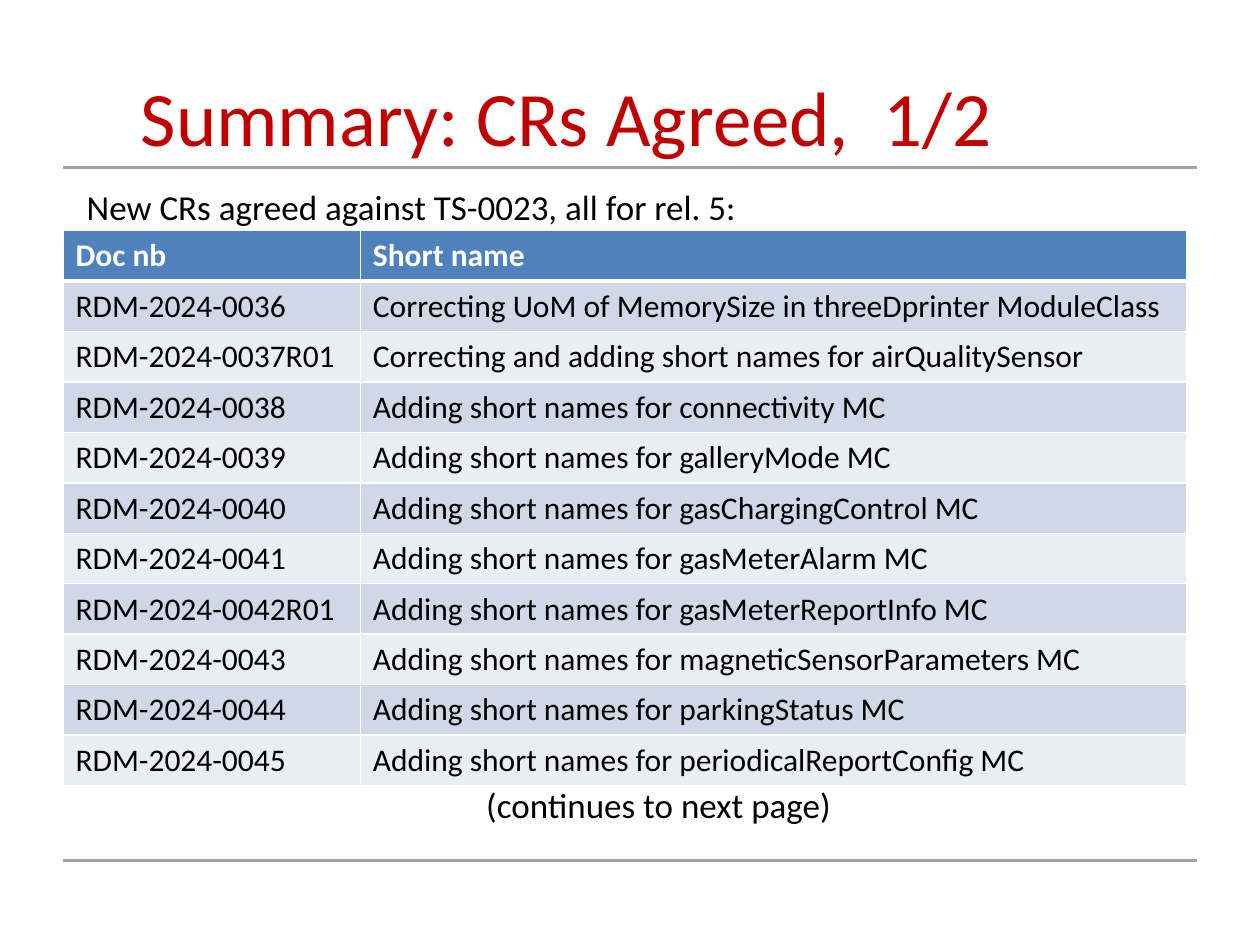
from lxml.etree import SubElement
from pptx import Presentation
from pptx.dml.color import RGBColor
from pptx.enum.shapes import MSO_CONNECTOR
from pptx.enum.text import MSO_ANCHOR, PP_ALIGN
from pptx.oxml.ns import qn
from pptx.util import Inches, Pt

COLORS = {
    "rule": "A0A0A3",
    "title": "C00000",
    "text": "000000",
    "white": "FFFFFF",
    "header": "4F81BD",
    "odd_row": "D0D8E8",
    "even_row": "E9EDF4",
}
FONT = "Calibri"
ROW_HEIGHT = 0.4
COLUMN_WIDTHS = (2.36, 6.56)
HEADINGS = ("Doc nb", "Short name")
CHANGE_REQUESTS = (
    ("RDM-2024-0036", "Correcting UoM of MemorySize in threeDprinter ModuleClass"),
    ("RDM-2024-0037R01", "Correcting and adding short names for airQualitySensor"),
    ("RDM-2024-0038", "Adding short names for connectivity MC"),
    ("RDM-2024-0039", "Adding short names for galleryMode MC"),
    ("RDM-2024-0040", "Adding short names for gasChargingControl MC"),
    ("RDM-2024-0041", "Adding short names for gasMeterAlarm MC"),
    ("RDM-2024-0042R01", "Adding short names for gasMeterReportInfo MC"),
    ("RDM-2024-0043", "Adding short names for magneticSensorParameters MC"),
    ("RDM-2024-0044", "Adding short names for parkingStatus MC"),
    ("RDM-2024-0045", "Adding short names for periodicalReportConfig MC"),
)


def color(name):
    return RGBColor.from_string(COLORS[name])


def format_runs(paragraph, size, color_name, bold=False):
    for run in paragraph.runs:
        run.font.name = FONT
        run.font.size = Pt(size)
        run.font.bold = bold
        run.font.color.rgb = color(color_name)


def add_rule(slide, top):
    rule = slide.shapes.add_connector(
        MSO_CONNECTOR.STRAIGHT, Inches(0.5), Inches(top), Inches(9.5), Inches(top)
    )
    rule.line.color.rgb = color("rule")
    rule.line.width = Pt(1.75)
    SubElement(rule._element.spPr, qn("a:effectLst"))


def add_text(slide, text, box, size, color_name, align=PP_ALIGN.LEFT, indent=0):
    shape = slide.shapes.add_textbox(*(Inches(length) for length in box))
    text_frame = shape.text_frame
    text_frame.word_wrap = True
    text_frame.vertical_anchor = MSO_ANCHOR.TOP
    text_frame.text = text
    paragraph = text_frame.paragraphs[0]
    paragraph.alignment = align
    if indent:
        paragraph._p.get_or_add_pPr().set("marL", str(Inches(indent)))
    format_runs(paragraph, size, color_name)


def set_borders(cell, widths):
    properties = cell._tc.get_or_add_tcPr()
    for position, (side, width) in enumerate(widths.items()):
        border = properties.makeelement(qn(f"a:{side}"), {"w": str(Pt(width))})
        fill = SubElement(border, qn("a:solidFill"))
        SubElement(fill, qn("a:srgbClr"), val=COLORS["white"])
        properties.insert(position, border)


def fill_cell(cell, text, row_index):
    is_header = row_index == 0
    fill_name = "header" if is_header else "odd_row" if row_index % 2 else "even_row"
    cell.text_frame.text = text
    format_runs(
        cell.text_frame.paragraphs[0], 18, "white" if is_header else "text", is_header
    )
    cell.fill.solid()
    cell.fill.fore_color.rgb = color(fill_name)
    top = 3 if row_index == 1 else 1
    bottom = 3 if is_header else 1
    set_borders(cell, {"lnL": 1, "lnR": 1, "lnT": top, "lnB": bottom})


def add_request_table(slide):
    rows = (HEADINGS, *CHANGE_REQUESTS)
    table = slide.shapes.add_table(
        len(rows), len(HEADINGS), Inches(0.5), Inches(1.83),
        Inches(sum(COLUMN_WIDTHS)), Inches(ROW_HEIGHT * len(rows)),
    ).table
    for column, width in zip(table.columns, COLUMN_WIDTHS):
        column.width = Inches(width)
    for row_index, texts in enumerate(rows):
        table.rows[row_index].height = Inches(ROW_HEIGHT)
        for column_index, text in enumerate(texts):
            fill_cell(table.cell(row_index, column_index), text, row_index)


def main():
    presentation = Presentation()
    presentation.slide_width = Inches(10)
    presentation.slide_height = Inches(7.5)
    slide = presentation.slides.add_slide(presentation.slide_layouts[6])
    for top in (6.83, 1.33):
        add_rule(slide, top)
    add_text(slide, "Summary: CRs Agreed,  1/2", (0, 0.5, 9, 1.25), 44, "title",
             align=PP_ALIGN.CENTER)
    add_text(slide, "New CRs agreed against TS-0023, all for rel. 5:",
             (0.5, 1.42, 8.5, 0.5), 20, "text", indent=0.09)
    add_request_table(slide)
    add_text(slide, "(continues to next page)", (0.67, 6.17, 8.5, 0.5), 20, "text",
             indent=3.09)
    presentation.save("out.pptx")


if __name__ == "__main__":
    main()
